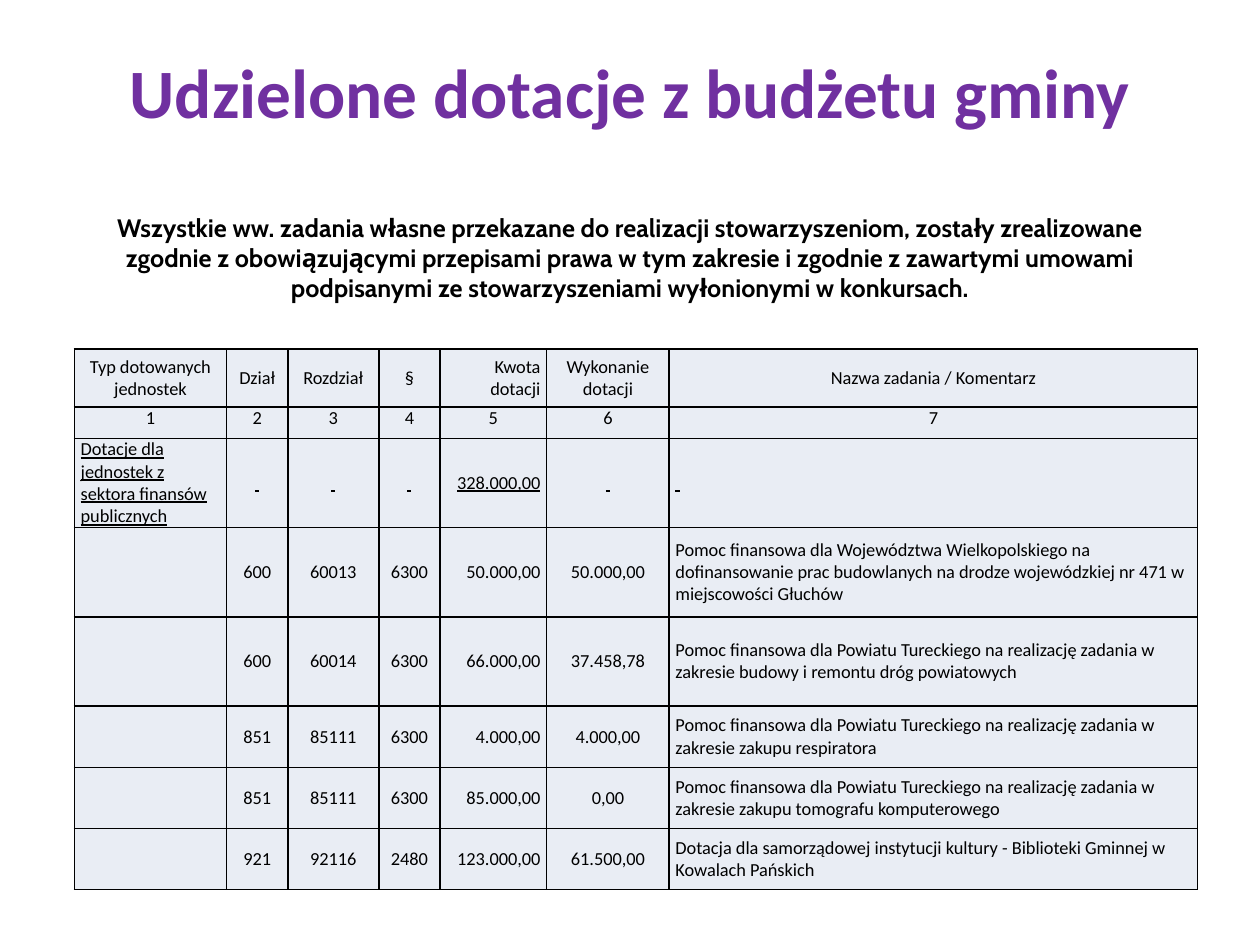
from dataclasses import dataclass

from lxml import etree
from pptx import Presentation
from pptx.dml.color import RGBColor
from pptx.enum.text import MSO_ANCHOR, MSO_AUTO_SIZE, PP_ALIGN
from pptx.oxml.ns import qn
from pptx.util import Pt

LEFT, CENTER, RIGHT = PP_ALIGN.LEFT, PP_ALIGN.CENTER, PP_ALIGN.RIGHT
TOP, MIDDLE = MSO_ANCHOR.TOP, MSO_ANCHOR.MIDDLE
TITLE_ONLY = 5


@dataclass(frozen=True)
class Theme:
    heading: str = "7030A0"
    text: str = "000000"
    border: str = "000000"
    cell: str = "E9EDF4"
    heading_font: str = "Calibri"
    note_font: str = "Cabin"
    heading_size: float = 39.6
    note_size: float = 14.4
    table_size: float = 10.5


theme = Theme()


def add_run(paragraph, text, font, size, color, bold=False, underline=False):
    run = paragraph.add_run()
    run.text = text
    run.font.name = font
    run.font.size = Pt(size)
    run.font.bold = bold
    run.font.underline = underline
    run.font.color.rgb = RGBColor.from_string(color)


def add_borders(cell):
    properties = cell._tc.get_or_add_tcPr()
    for side in ("a:lnL", "a:lnR", "a:lnT", "a:lnB"):
        line = etree.SubElement(properties, qn(side), w=str(Pt(1)))
        fill = etree.SubElement(line, qn("a:solidFill"))
        etree.SubElement(fill, qn("a:srgbClr"), val=theme.border)


presentation = Presentation()
presentation.slide_width, presentation.slide_height = Pt(720), Pt(540)
slide = presentation.slides.add_slide(presentation.slide_layouts[TITLE_ONLY])

# Heading and the statement below it share the title placeholder
title = slide.shapes.title
title.left, title.top, title.width, title.height = Pt(36), Pt(21.6), Pt(648), Pt(203)
frame = title.text_frame
frame.word_wrap = True
frame.auto_size = MSO_AUTO_SIZE.NONE
frame.vertical_anchor = TOP
frame.margin_top = Pt(6.4)
heading = frame.paragraphs[0]
heading.alignment = CENTER
add_run(heading, "Udzielone dotacje z budżetu gminy",
        theme.heading_font, theme.heading_size, theme.heading, bold=True)
statement = frame.add_paragraph()
statement.alignment = CENTER
statement.space_before = Pt(45.7)
add_run(statement,
        "Wszystkie ww. zadania własne przekazane do realizacji stowarzyszeniom, "
        "zostały zrealizowane zgodnie z obowiązującymi przepisami prawa w tym "
        "zakresie i zgodnie z zawartymi umowami podpisanymi ze stowarzyszeniami "
        "wyłonionymi w konkursach.",
        theme.note_font, theme.note_size, theme.text, bold=True)

# Table content
powiat = "Pomoc finansowa dla Powiatu Tureckiego na realizację zadania w zakresie "
grants = [
    ["Typ dotowanych jednostek", "Dział", "Rozdział", "§", "Kwota dotacji",
     "Wykonanie dotacji", "Nazwa zadania / Komentarz"],
    ["1", "2", "3", "4", "5", "6", "7"],
    ["Dotacje dla jednostek z sektora finansów publicznych",
     " ", " ", " ", "328.000,00", " ", " "],
    ["", "600", "60013", "6300", "50.000,00", "50.000,00",
     "Pomoc finansowa dla Województwa Wielkopolskiego na dofinansowanie prac "
     "budowlanych na drodze wojewódzkiej nr 471 w miejscowości Głuchów"],
    ["", "600", "60014", "6300", "66.000,00", "37.458,78",
     powiat + "budowy i remontu dróg powiatowych"],
    ["", "851", "85111", "6300", "4.000,00", "4.000,00",
     powiat + "zakupu respiratora"],
    ["", "851", "85111", "6300", "85.000,00", "0,00",
     powiat + "zakupu tomografu komputerowego"],
    ["", "921", "92116", "2480", "123.000,00", "61.500,00",
     "Dotacja dla samorządowej instytucji kultury - Biblioteki Gminnej "
     "w Kowalach Pańskich"],
]
column_widths = [87, 35, 52, 35, 61, 70, 302]
row_heights = [33, 18, 51, 51, 51, 35, 35, 35]
body_alignments = [LEFT, CENTER, CENTER, CENTER, RIGHT, CENTER, LEFT]
header_alignments = [CENTER] * 4 + [RIGHT] + [CENTER] * 2
NUMBER_ROW, SECTOR_ROW = 1, 2

# Grants table
table = slide.shapes.add_table(
    len(row_heights), len(column_widths), Pt(42.5), Pt(199.5),
    Pt(sum(column_widths)), Pt(sum(row_heights))).table
table.first_row = table.horz_banding = False
for column, width in zip(table.columns, column_widths):
    column.width = Pt(width)

for r, (row, height, texts) in enumerate(zip(table.rows, row_heights, grants)):
    row.height = Pt(height)
    alignments = {0: header_alignments, NUMBER_ROW: [CENTER] * 7}.get(r, body_alignments)
    for cell, text, alignment in zip(row.cells, texts, alignments):
        add_borders(cell)
        cell.fill.solid()
        cell.fill.fore_color.rgb = RGBColor.from_string(theme.cell)
        cell.margin_left = cell.margin_right = Pt(3.6)
        cell.margin_top = cell.margin_bottom = Pt(0)
        cell.vertical_anchor = TOP if r == NUMBER_ROW else MIDDLE
        paragraph = cell.text_frame.paragraphs[0]
        paragraph.alignment = alignment
        if text:
            add_run(paragraph, text, theme.heading_font, theme.table_size,
                    theme.text, underline=r == SECTOR_ROW)

presentation.save("out.pptx")
